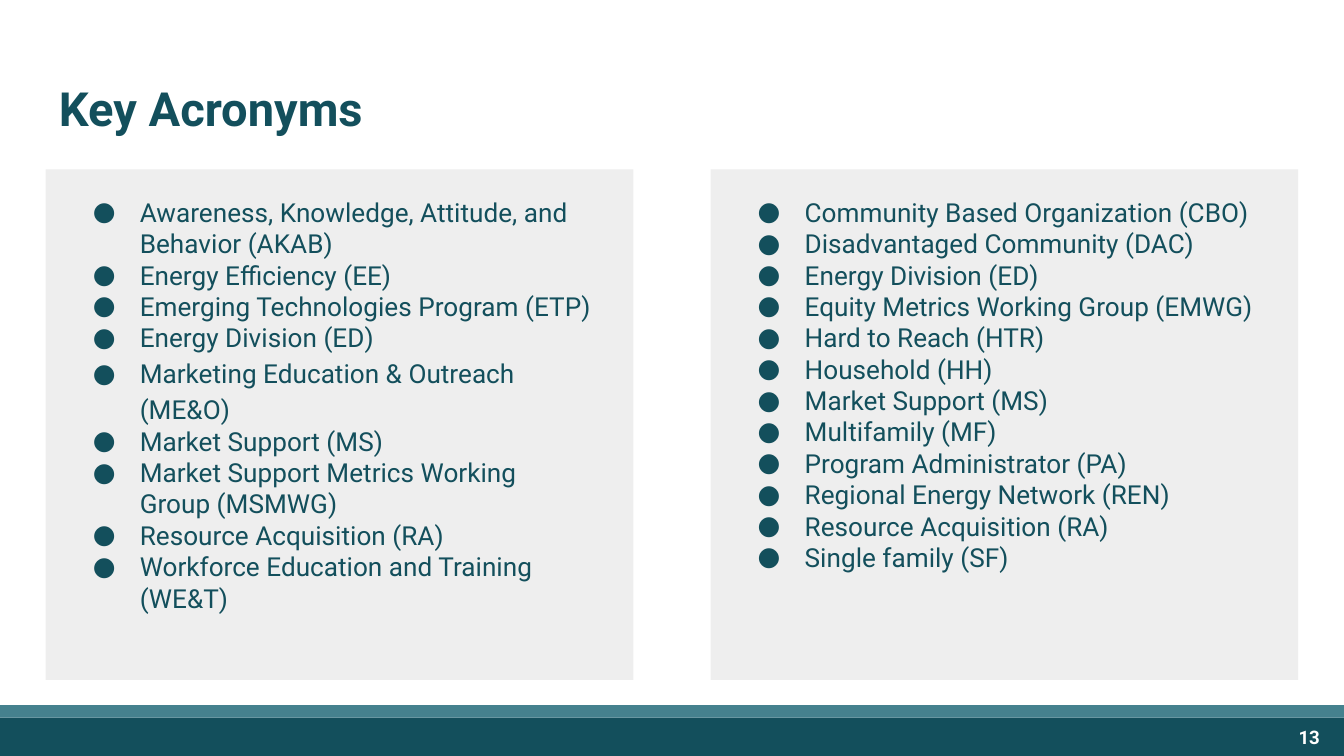
import pptx
import pptx.dml.color
import pptx.enum.shapes
import pptx.enum.text
import pptx.oxml
import pptx.oxml.ns
import pptx.util

Pt = pptx.util.Pt
ALIGN = pptx.enum.text.PP_ALIGN
ANCHOR = pptx.enum.text.MSO_ANCHOR

TITLE = "Key Acronyms"
PAGE_NUMBER = "13"
LOOSE_ITEM = "Marketing Education & Outreach (ME&O)"
COLUMNS = [
    [
        "Awareness, Knowledge, Attitude, and Behavior (AKAB)",
        "Energy Efficiency (EE)",
        "Emerging Technologies Program (ETP)",
        "Energy Division (ED)",
        LOOSE_ITEM,
        "Market Support (MS)",
        "Market Support Metrics Working Group (MSMWG)",
        "Resource Acquisition (RA)",
        "Workforce Education and Training (WE&T)",
    ],
    [
        "Community Based Organization (CBO)",
        "Disadvantaged Community (DAC)",
        "Energy Division (ED)",
        "Equity Metrics Working Group (EMWG)",
        "Hard to Reach (HTR)",
        "Household (HH)",
        "Market Support (MS)",
        "Multifamily (MF)",
        "Program Administrator (PA)",
        "Regional Energy Network (REN)",
        "Resource Acquisition (RA)",
        "Single family (SF)",
    ],
]
COLORS = {"dark": "134F5C", "teal": "45818E", "panel": "EEEEEE", "white": "FFFFFF"}
FONT = "Roboto"
SLIDE_W, SLIDE_H = 720, 405
MARGIN = 24.5
PANEL_TOP, PANEL_W, PANEL_H = 90.7, 314.8, 273.6
FOOTER_TOP, STRIPE_H = 384.5, 6.7
INDENT, HANGING = 36, -25.2


def rgb(name):
    return pptx.dml.color.RGBColor.from_string(COLORS[name])


def add_rect(slide, left, top, width, height, color):
    s = slide.shapes.add_shape(pptx.enum.shapes.MSO_SHAPE.RECTANGLE,
                               Pt(left), Pt(top), Pt(width), Pt(height))
    s.shadow.inherit = False
    s.fill.solid()
    s.fill.fore_color.rgb = rgb(color)
    s.line.fill.background()
    return s


def set_frame(tf, margins, anchor):
    tf.word_wrap = True
    tf.vertical_anchor = anchor
    for side, value in zip(("left", "top", "right", "bottom"), margins):
        setattr(tf, f"margin_{side}", Pt(value))


def set_font(font, size, color, bold=False):
    for name, value in {"name": FONT, "size": Pt(size), "bold": bold}.items():
        setattr(font, name, value)
    font.color.rgb = rgb(color)


def add_label(slide, text, box, size, color, align, anchor):
    s = slide.shapes.add_textbox(*(Pt(v) for v in box))
    set_frame(s.text_frame, [7.2] * 4, anchor)
    p = s.text_frame.paragraphs[0]
    p.alignment = align
    r = p.add_run()
    r.text = text
    set_font(r.font, size, color, bold=True)


def add_bullet(p):
    ppr = p._p.get_or_add_pPr()
    ppr.set("marL", str(Pt(INDENT)))
    ppr.set("indent", str(Pt(HANGING)))
    ns = pptx.oxml.ns.nsdecls("a")
    for xml in (f'<a:buClr {ns}><a:srgbClr val="{COLORS["dark"]}"/></a:buClr>',
                f'<a:buFont {ns} typeface="{FONT}"/>',
                f'<a:buChar {ns} char="●"/>'):
        ppr.append(pptx.oxml.parse_xml(xml))


def add_panel(slide, left, items):
    s = add_rect(slide, left, PANEL_TOP, PANEL_W, PANEL_H, "panel")
    tf = s.text_frame
    set_frame(tf, (14.4, 14.4, 21.6, 14.4), ANCHOR.TOP)
    for i, item in enumerate(items):
        p = tf.add_paragraph() if i else tf.paragraphs[0]
        p.alignment = ALIGN.LEFT
        p.line_spacing = 1.15 if item == LOOSE_ITEM else 1.0
        add_bullet(p)
        r = p.add_run()
        r.text = item
        set_font(r.font, 14, "dark")


def main():
    prs = pptx.Presentation()
    prs.slide_width, prs.slide_height = Pt(SLIDE_W), Pt(SLIDE_H)
    slide = prs.slides.add_slide(prs.slide_layouts[6])

    footer_h = SLIDE_H - FOOTER_TOP
    add_rect(slide, 0, FOOTER_TOP, SLIDE_W, footer_h, "dark")
    add_rect(slide, 0, FOOTER_TOP - STRIPE_H, SLIDE_W, STRIPE_H, "teal")
    add_label(slide, TITLE, (MARGIN, 35.3, SLIDE_W - 2 * MARGIN, 45.4),
              25.2, "dark", ALIGN.LEFT, ANCHOR.TOP)
    for left, items in zip((MARGIN, SLIDE_W - MARGIN - PANEL_W), COLUMNS):
        add_panel(slide, left, items)
    add_label(slide, PAGE_NUMBER, (671, FOOTER_TOP, 43.2, footer_h),
              10, "white", ALIGN.RIGHT, ANCHOR.MIDDLE)
    prs.save("out.pptx")


if __name__ == "__main__":
    main()
